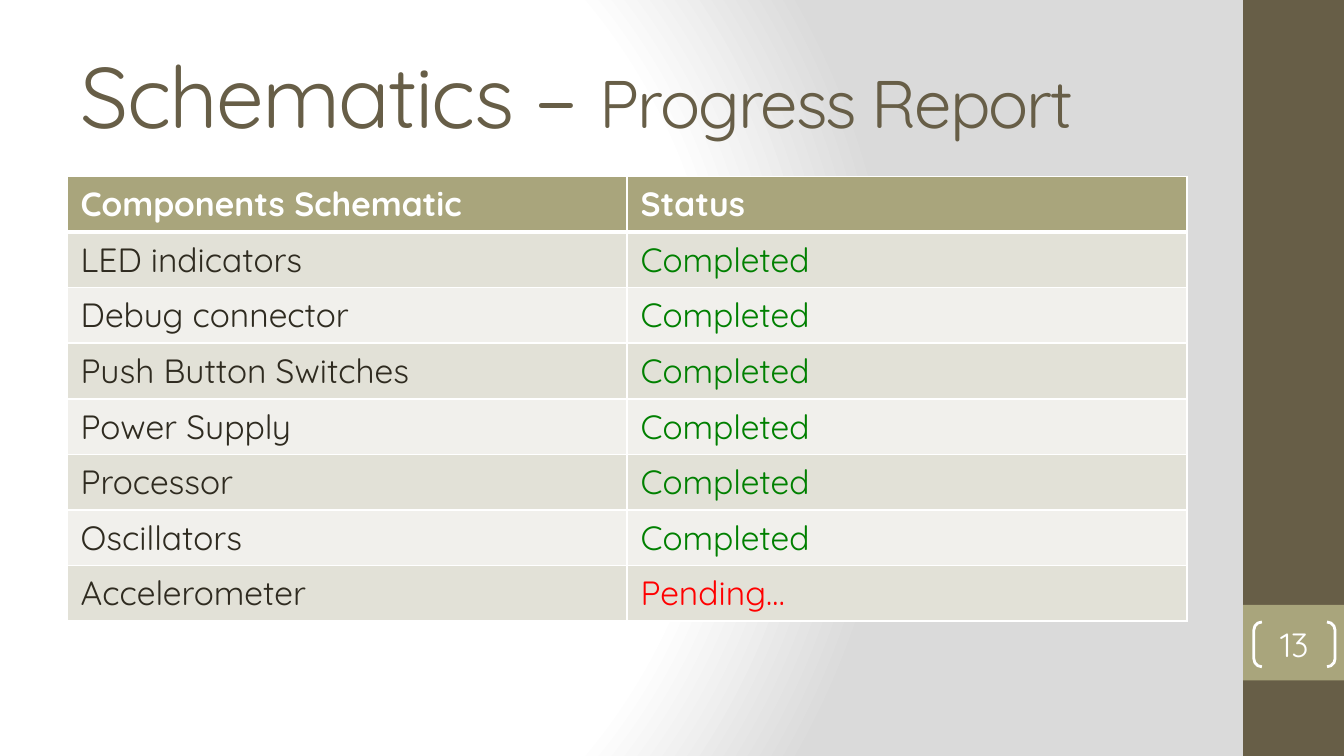
from lxml import etree
from pptx import Presentation
from pptx.dml.color import RGBColor
from pptx.enum.shapes import MSO_SHAPE
from pptx.enum.text import MSO_ANCHOR, MSO_AUTO_SIZE, PP_ALIGN
from pptx.oxml import parse_xml
from pptx.oxml.ns import nsdecls, qn
from pptx.util import Pt

FONT = "Quicksand"
WHITE = RGBColor(0xFF, 0xFF, 0xFF)
GREY = RGBColor(0xDA, 0xDA, 0xDA)
BROWN = RGBColor(0x67, 0x5E, 0x47)
OLIVE = RGBColor(0xA9, 0xA5, 0x7C)
INK = RGBColor(0x2F, 0x2B, 0x20)
GREEN = RGBColor(0x00, 0x80, 0x00)
RED = RGBColor(0xFF, 0x00, 0x00)
BANDS = (RGBColor(0xE2, 0xE1, 0xD7), RGBColor(0xF1, 0xF0, 0xEC))

HEADINGS = ("Components Schematic", "Status")
COMPLETED, PENDING = "Completed", "Pending…"
STATUS_COLORS = {COMPLETED: GREEN, PENDING: RED}
COMPONENTS = (
    ("LED indicators", COMPLETED),
    ("Debug connector", COMPLETED),
    ("Push Button Switches", COMPLETED),
    ("Power Supply", COMPLETED),
    ("Processor", COMPLETED),
    ("Oscillators", COMPLETED),
    ("Accelerometer", PENDING),
)


def add_run(paragraph, text, size, color, bold=False):
    run = paragraph.add_run()
    run.text = text
    run.font.name = FONT
    run.font.size = Pt(size)
    run.font.bold = bold
    run.font.color.rgb = color
    return run


def add_block(slide, left, top, width, height, color):
    block = slide.shapes.add_shape(
        MSO_SHAPE.RECTANGLE, Pt(left), Pt(top), Pt(width), Pt(height))
    block.shadow.inherit = False
    block.fill.solid()
    block.fill.fore_color.rgb = color
    block.line.fill.background()


def set_background(slide):
    """Fill the background with a circular white-to-grey gradient."""
    fill = slide.background.fill
    fill.solid()
    solid = next(slide.element.iter(qn("a:solidFill")))
    stops = "".join(
        f'<a:gs pos="{percent * 1000}"><a:srgbClr val="{color}"/></a:gs>'
        for percent, color in ((0, WHITE), (75, WHITE), (100, GREY)))
    gradient = parse_xml(
        f'<a:gradFill {nsdecls("a")} rotWithShape="1"><a:gsLst>{stops}</a:gsLst>'
        '<a:path path="circle"><a:fillToRect l="20000" t="50000" r="100000" b="50000"/>'
        '</a:path></a:gradFill>')
    solid.getparent().replace(solid, gradient)


def add_sidebar(slide, left, top, width, height, number):
    add_block(slide, left, top, width, height, BROWN)
    badge_top, badge_height = top + 0.8 * height, 0.1 * height
    add_block(slide, left, badge_top, width, badge_height, OLIVE)

    bracket_width, bracket_height = 43.5, 24
    bracket = slide.shapes.add_shape(
        MSO_SHAPE.DOUBLE_BRACKET,
        Pt(left + 5.7), Pt(badge_top + 9.2), Pt(bracket_width), Pt(bracket_height))
    bracket.adjustments[0] = 0.18
    bracket.shadow.inherit = False
    bracket.fill.background()
    bracket.line.color.rgb = WHITE
    bracket.line.width = Pt(1.5)
    frame = bracket.text_frame
    frame.margin_left = frame.margin_top = frame.margin_right = frame.margin_bottom = 0
    frame.vertical_anchor = MSO_ANCHOR.MIDDLE
    paragraph = frame.paragraphs[0]
    paragraph.alignment = PP_ALIGN.CENTER
    add_run(paragraph, number, 18, WHITE)


def place_title(slide, left, top, width, height):
    title = slide.shapes.title
    title.left, title.top, title.width, title.height = map(Pt, (left, top, width, height))
    frame = title.text_frame
    frame.word_wrap = True
    frame.auto_size = MSO_AUTO_SIZE.NONE
    frame.vertical_anchor = MSO_ANCHOR.MIDDLE
    paragraph = frame.paragraphs[0]
    paragraph.alignment = PP_ALIGN.LEFT
    for text, size in (("Schematics – ", 46), ("Progress Report", 36)):
        run = add_run(paragraph, text, size, BROWN)
        run.font._element.set("spc", "-100")


def set_borders(cell, bottom):
    """Draw white cell borders, 1 pt wide except for the given bottom width."""
    properties = cell._tc.get_or_add_tcPr()
    for side, width in (("L", 1), ("R", 1), ("T", 1), ("B", bottom)):
        line = etree.SubElement(properties, qn(f"a:ln{side}"), w=str(Pt(width)))
        fill = etree.SubElement(line, qn("a:solidFill"))
        etree.SubElement(fill, qn("a:srgbClr"), val=str(WHITE))


def fill_cell(cell, text, color, background, bold=False, bottom=1):
    set_borders(cell, bottom)
    cell.fill.solid()
    cell.fill.fore_color.rgb = background
    add_run(cell.text_frame.paragraphs[0], text, 18, color, bold)


def add_status_table(slide, left, top, width, height):
    row_count = len(COMPONENTS) + 1
    table = slide.shapes.add_table(
        row_count, len(HEADINGS), Pt(left), Pt(top), Pt(width), Pt(height)).table
    table.horz_banding = False
    for column, heading in enumerate(HEADINGS):
        fill_cell(table.cell(0, column), heading, WHITE, OLIVE, bold=True, bottom=3)
    for row, (component, status) in enumerate(COMPONENTS, start=1):
        band = BANDS[(row - 1) % 2]
        fill_cell(table.cell(row, 0), component, INK, band)
        fill_cell(table.cell(row, 1), status, STATUS_COLORS[status], band)
    # The heavy rule under the header is shared with the first body row.
    for cell in table.rows[1].cells:
        cell._tc.tcPr.find(qn("a:lnT")).set("w", str(Pt(3)))


def main():
    presentation = Presentation()
    presentation.slide_width, presentation.slide_height = Pt(720), Pt(405)
    slide = presentation.slides.add_slide(presentation.slide_layouts.get_by_name("Title Only"))
    set_background(slide)
    add_sidebar(slide, 666, 0, 54, 405, "13")
    place_title(slide, 36, 16.5, 600, 67.5)
    add_status_table(slide, 36, 94.5, 600, 238)
    presentation.save("out.pptx")


if __name__ == "__main__":
    main()
